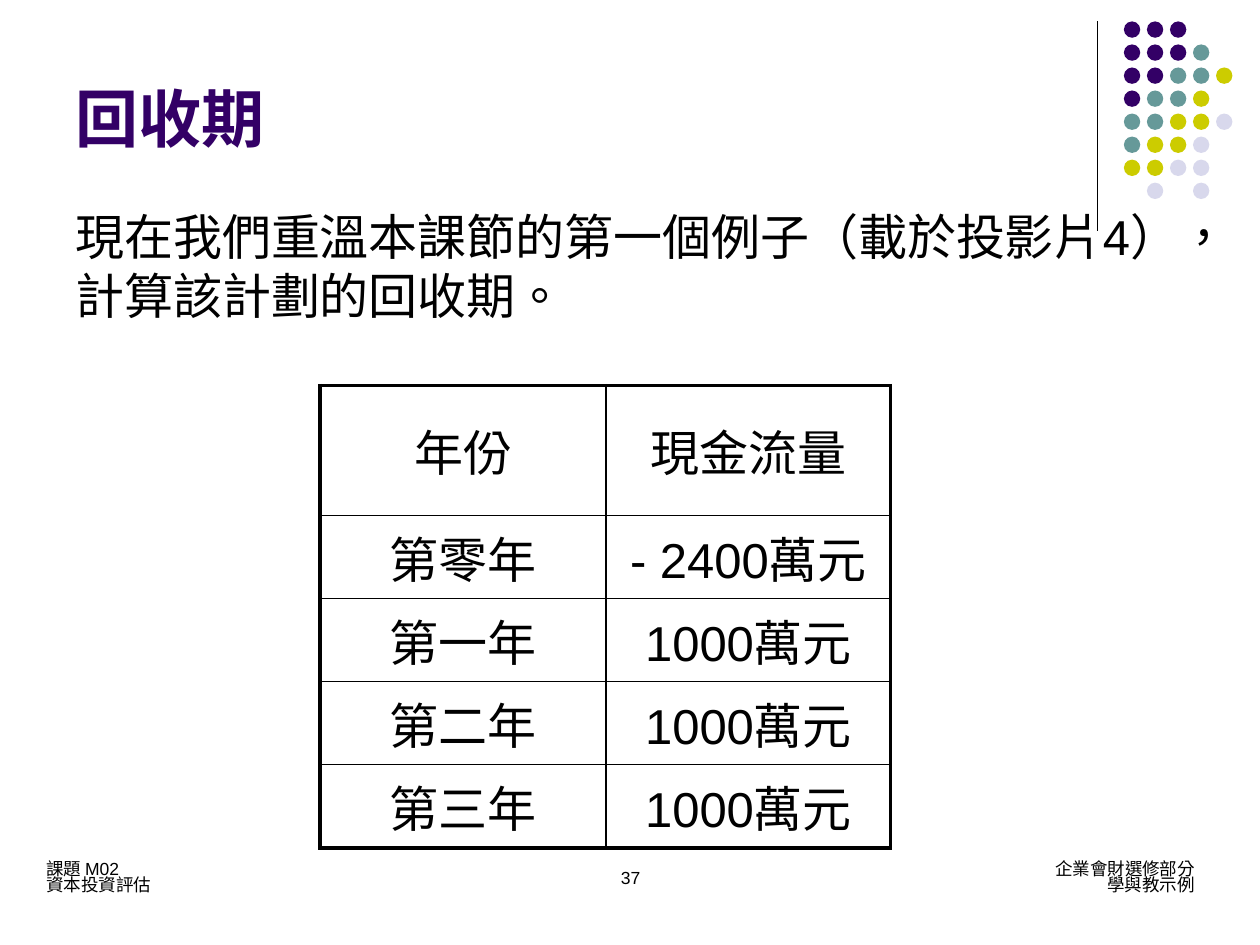
from dataclasses import dataclass

from lxml import etree
from pptx import Presentation
from pptx.dml.color import RGBColor
from pptx.enum.lang import MSO_LANGUAGE_ID
from pptx.enum.shapes import MSO_CONNECTOR, MSO_SHAPE
from pptx.enum.text import MSO_ANCHOR, PP_ALIGN
from pptx.oxml.ns import qn
from pptx.util import Inches, Pt

LEFT, CENTER, RIGHT = PP_ALIGN.LEFT, PP_ALIGN.CENTER, PP_ALIGN.RIGHT
TOP, MIDDLE, BOTTOM = MSO_ANCHOR.TOP, MSO_ANCHOR.MIDDLE, MSO_ANCHOR.BOTTOM
OVAL = MSO_SHAPE.OVAL
STRAIGHT = MSO_CONNECTOR.STRAIGHT
CHINESE = MSO_LANGUAGE_ID.TRADITIONAL_CHINESE

BLACK = RGBColor(0x00, 0x00, 0x00)
PURPLE = RGBColor(0x33, 0x00, 0x66)
TEAL = RGBColor(0x66, 0x99, 0x99)
OLIVE = RGBColor(0xCC, 0xCC, 0x00)
LAVENDER = RGBColor(0xD8, 0xD8, 0xEC)

FONT = "Arial"
BODY_SIZE = 28
PARAGRAPH_GAP = Pt(0.2 * BODY_SIZE)
THICK, THIN = Pt(2.25), Pt(1)

# One letter per dot; a point leaves the place empty
DOT_COLORS = {"P": PURPLE, "T": TEAL, "O": OLIVE, "L": LAVENDER}
DOT_ROWS = ["PPP..", "PPPT.", "PPTTO", "PTTO.", "TTOOL", "TOOL.", "OOLL.", ".L.L."]
DOT_SIZE = Inches(0.13)
DOT_PITCH = Inches(1.28) // 7

CASH_FLOWS = [
    ("年份", "現金流量"),
    ("第零年", "- 2400萬元"),
    ("第一年", "1000萬元"),
    ("第二年", "1000萬元"),
    ("第三年", "1000萬元"),
]
COLUMN_WIDTHS = [2.27, 2.26]
ROW_HEIGHTS = [1.03] + [0.66] * 4


@dataclass
class TextBlock:
    lines: list[str]
    left: float
    top: float
    width: float
    height: float
    size: float = 10
    color: RGBColor = BLACK
    bold: bool = False
    align: PP_ALIGN = LEFT
    anchor: MSO_ANCHOR = TOP
    line_spacing: float = 1.0
    space_before: int = 0


TEXT_BLOCKS = [
    TextBlock(["課題 M02", "資本投資評估"], 0.27, 6.8, 2.03, 0.35, line_spacing=0.75),
    TextBlock(["企業會財選修部分", "學與教示例"], 7.36, 6.8, 2.22, 0.35,
              align=RIGHT, line_spacing=0.75),
    TextBlock(["37"], 3.42, 6.83, 3.17, 0.5, align=CENTER),
    TextBlock(["回收期"], 0.5, 0.13, 8.25, 1.15, size=36, color=PURPLE,
              bold=True, anchor=BOTTOM),
    TextBlock(["現在我們重溫本課節的第一個例子（載於投影片4），計算該計劃的回收期。"],
              0.5, 1.59, 9, 5.12, size=BODY_SIZE, space_before=PARAGRAPH_GAP),
]


def draw_rule(page) -> None:
    rule = page.shapes.add_connector(
        STRAIGHT, Inches(8.71), Inches(0.17), Inches(8.71), Inches(1.83))
    rule.line.color.rgb = BLACK
    rule.line.width = Pt(0.75)
    etree.SubElement(rule._element.spPr, qn("a:effectLst"))


def draw_dots(page) -> None:
    group = page.shapes.add_group_shape()
    for row, letters in enumerate(DOT_ROWS):
        for column, letter in enumerate(letters):
            if letter not in DOT_COLORS:
                continue
            dot = group.shapes.add_shape(
                OVAL, Inches(8.92) + column * DOT_PITCH,
                Inches(0.17) + row * DOT_PITCH, DOT_SIZE, DOT_SIZE)
            dot.shadow.inherit = False
            dot.fill.solid()
            dot.fill.fore_color.rgb = DOT_COLORS[letter]
            dot.line.fill.background()


def set_font(para, size: float, color: RGBColor, bold: bool = False) -> None:
    para.font.name = FONT
    para.font.size = Pt(size)
    para.font.color.rgb = color
    para.font.bold = bold
    # The language decides where Chinese punctuation sits in its square
    for span in para.runs:
        span.font.language_id = CHINESE


def draw_text(page, block: TextBlock) -> None:
    box = page.shapes.add_textbox(Inches(block.left), Inches(block.top),
                                  Inches(block.width), Inches(block.height))
    frame = box.text_frame
    frame.word_wrap = True
    frame.vertical_anchor = block.anchor
    frame.text = "\n".join(block.lines)
    for para in frame.paragraphs:
        para.alignment = block.align
        para.line_spacing = block.line_spacing
        para.space_before = block.space_before
        set_font(para, block.size, block.color, block.bold)


def set_borders(cell, widths: dict[str, int]) -> None:
    properties = cell._tc.get_or_add_tcPr()
    for position, (side, width) in enumerate(widths.items()):
        line = etree.Element(qn(f"a:ln{side}"), w=str(int(width)))
        fill = etree.SubElement(line, qn("a:solidFill"))
        etree.SubElement(fill, qn("a:srgbClr"), val=str(BLACK))
        properties.insert(position, line)


def draw_table(page) -> None:
    last_row, last_column = len(ROW_HEIGHTS) - 1, len(COLUMN_WIDTHS) - 1
    table = page.shapes.add_table(
        len(ROW_HEIGHTS), len(COLUMN_WIDTHS), Inches(2.54), Inches(3.06),
        Inches(sum(COLUMN_WIDTHS)), Inches(sum(ROW_HEIGHTS))).table
    table.first_row = table.horz_banding = False
    for column, width in zip(table.columns, COLUMN_WIDTHS):
        column.width = Inches(width)
    for row, height in zip(table.rows, ROW_HEIGHTS):
        row.height = Inches(height)

    for i, texts in enumerate(CASH_FLOWS):
        for j, text in enumerate(texts):
            cell = table.cell(i, j)
            cell.text = text
            cell.vertical_anchor = MIDDLE
            cell.fill.background()
            para = cell.text_frame.paragraphs[0]
            para.alignment = CENTER
            para.space_before = PARAGRAPH_GAP
            set_font(para, BODY_SIZE, BLACK)
            # Thick outer frame, thin inner grid
            set_borders(cell, {
                "L": THICK if j == 0 else THIN,
                "R": THICK if j == last_column else THIN,
                "T": THICK if i == 0 else THIN,
                "B": THICK if i == last_row else THIN,
            })


def main() -> None:
    deck = Presentation()
    deck.slide_width, deck.slide_height = Inches(10), Inches(7.5)
    page = deck.slides.add_slide(deck.slide_layouts[6])

    # Corner decoration
    draw_rule(page)
    draw_dots(page)

    # Footers, title and body
    for block in TEXT_BLOCKS:
        draw_text(page, block)

    # Cash flow by year
    draw_table(page)

    deck.save("out.pptx")


if __name__ == "__main__":
    main()
